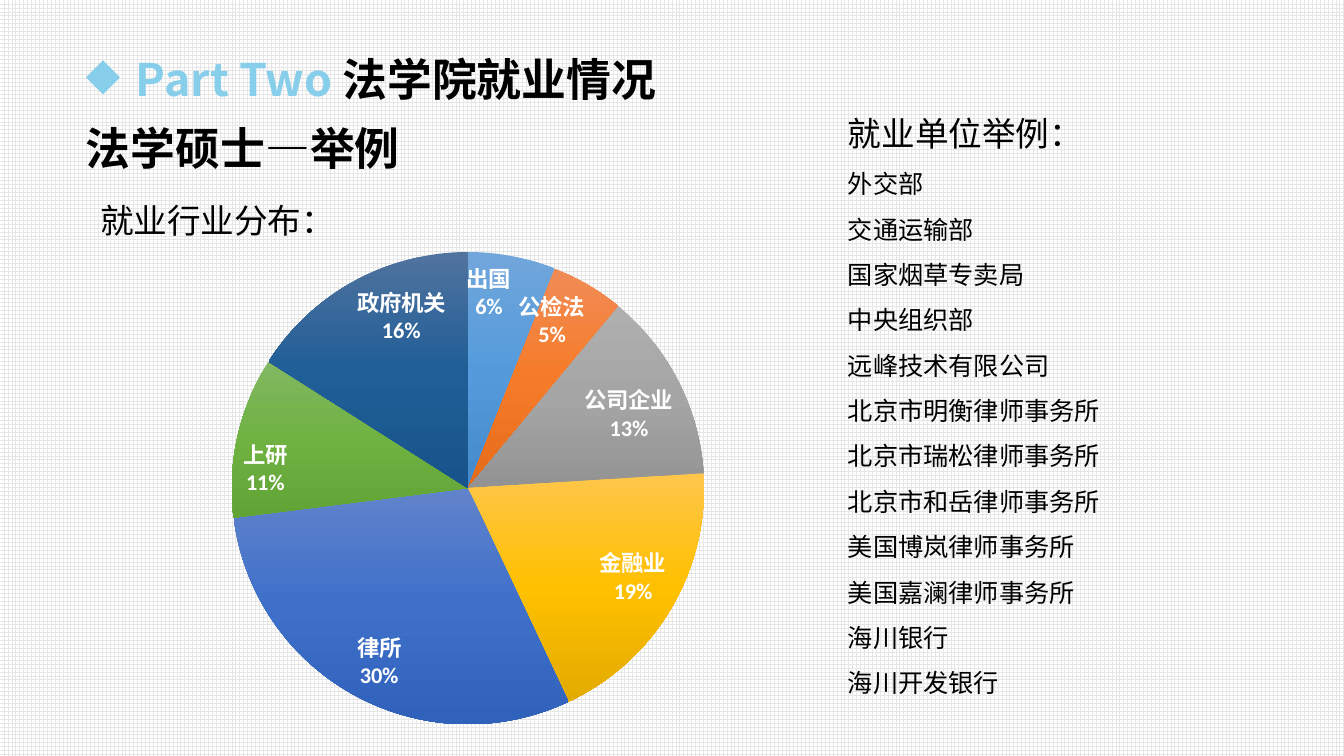
from copy import deepcopy

from lxml.etree import SubElement
from pptx import Presentation
from pptx.chart.data import CategoryChartData
from pptx.dml.color import RGBColor
from pptx.enum.chart import XL_CHART_TYPE, XL_LABEL_POSITION
from pptx.enum.dml import MSO_PATTERN
from pptx.enum.text import MSO_ANCHOR, MSO_AUTO_SIZE, PP_ALIGN
from pptx.oxml import parse_xml
from pptx.oxml.ns import nsdecls, qn
from pptx.util import Emu, Pt

SLIDE_WIDTH, SLIDE_HEIGHT = 1344, 756
SCALE = 12192000 / SLIDE_WIDTH
FONT = "Noto Sans CJK SC"
BLACK, WHITE, SKY = "000000", "FFFFFF", "87CEEB"

INDUSTRIES = [
    ("出国", 6, ("71A6DB", "559BDB", "448ACA")),
    ("公检法", 5, ("F18C57", "F67B28", "E56C19")),
    ("公司企业", 13, ("AFAFAF", "A5A5A5", "939393")),
    ("金融业", 19, ("FFC64B", "FFC000", "E3AB00")),
    ("律所", 30, ("6183CB", "3E70CA", "3062BB")),
    ("上研", 11, ("81B861", "6FB242", "62A336")),
    ("政府机关", 16, ("51739F", "205E97", "17548B")),
]
EMPLOYERS = [
    "外交部", "交通运输部", "国家烟草专卖局", "中央组织部",
    "远峰技术有限公司", "北京市明衡律师事务所", "北京市瑞松律师事务所",
    "北京市和岳律师事务所", "美国博岚律师事务所", "美国嘉澜律师事务所",
    "海川银行", "海川开发银行",
]


def px(length):
    return Emu(round(length * SCALE))


def color(hex_value):
    return RGBColor.from_string(hex_value)


def set_all(target, values):
    for name, value in values.items():
        setattr(target, name, value)


def place(holder, box):
    set_all(holder, dict(zip(("left", "top", "width", "height"), map(px, box))))


def prepare_frame(frame, wrap=True):
    set_all(frame, {
        "word_wrap": wrap, "auto_size": MSO_AUTO_SIZE.NONE,
        "vertical_anchor": MSO_ANCHOR.TOP,
        "margin_left": px(10), "margin_right": px(10),
        "margin_top": px(5), "margin_bottom": px(5),
    })


def write_line(paragraph, pieces, size, spacing, bold=False, bullet=None):
    set_all(paragraph, {
        "alignment": PP_ALIGN.LEFT, "line_spacing": Pt(spacing),
        "space_before": Pt(0), "space_after": Pt(0),
    })
    properties = paragraph._p.get_or_add_pPr()
    indent = px(50) if bullet else 0
    properties.set("marL", str(indent))
    properties.set("indent", str(-indent))
    if bullet:
        SubElement(properties, qn("a:buChar")).set("char", bullet)
    else:
        SubElement(properties, qn("a:buNone"))
    for text, hex_value in pieces:
        run = paragraph.add_run()
        run.text = text
        set_all(run.font, {"name": FONT, "size": Pt(size), "bold": bold})
        run.font.color.rgb = color(hex_value)
        east_asian = SubElement(run._r.get_or_add_rPr(), qn("a:ea"))
        east_asian.set("typeface", FONT)


def add_part_title(slide, box):
    title = slide.shapes.title
    place(title, box)
    prepare_frame(title.text_frame)
    write_line(title.text_frame.paragraphs[0],
               [("Part Two ", SKY), ("法学院就业情况", BLACK)],
               32, 41, bold=True, bullet="◆")


def add_heading(slide, box, text, size, spacing, bold=False):
    heading = slide.shapes.add_textbox(*map(px, box))
    prepare_frame(heading.text_frame)
    write_line(heading.text_frame.paragraphs[0], [(text, BLACK)],
               size, spacing, bold)


def add_employers(slide, box):
    employers = slide.placeholders[1]
    place(employers, box)
    frame = employers.text_frame
    prepare_frame(frame, wrap=False)
    write_line(frame.paragraphs[0], [("就业单位举例：", BLACK)], 24, 43.2)
    for employer in EMPLOYERS:
        write_line(frame.add_paragraph(), [(employer, BLACK)], 18, 32.4)


def shade_slice(point, shades):
    fill = point.format.fill
    fill.gradient()
    fill.gradient_angle = 270
    stop_list = point.format._element.find(".//" + qn("a:gsLst")) \
        if hasattr(point.format, "_element") else None
    if stop_list is None:
        stop_list = fill._fill._gradFill.gsLst
    stop_list.insert(1, deepcopy(stop_list[0]))
    for stop, position, shade in zip(fill.gradient_stops, (0, 0.5, 1), shades):
        stop.position = position
        stop.color.rgb = color(shade)
    point.format.line.fill.background()


def label_slices(series):
    labels = series.data_labels
    set_all(labels, {
        "show_percentage": True, "show_category_name": True,
        "show_value": False, "position": XL_LABEL_POSITION.INSIDE_END,
        "number_format": "0%", "number_format_is_linked": False,
    })
    set_all(labels.font, {"name": "Calibri", "size": Pt(16), "bold": True})
    labels.font.color.rgb = color(WHITE)
    separator = parse_xml(f"<c:separator {nsdecls('c')}>\n</c:separator>")
    labels._element.find(qn("c:showBubbleSize")).addnext(separator)


def fix_plot_area(chart):
    plot_area = chart._chartSpace.find(".//" + qn("c:plotArea"))
    for layout in plot_area.findall(qn("c:layout")):
        plot_area.remove(layout)
    layout = SubElement(plot_area, qn("c:layout"))
    plot_area.insert(0, layout)
    manual = SubElement(layout, qn("c:manualLayout"))
    for tag, value in (("layoutTarget", "inner"), ("xMode", "edge"),
                       ("yMode", "edge"), ("x", 0.1), ("y", 0),
                       ("w", 0.79), ("h", 0.98)):
        SubElement(manual, qn("c:" + tag)).set("val", str(value))


def add_industry_pie(slide, box):
    names, shares, shades = zip(*INDUSTRIES)
    data = CategoryChartData()
    data.categories = names
    data.add_series("就业行业分布", shares)
    chart = slide.shapes.add_chart(XL_CHART_TYPE.PIE, *map(px, box), data).chart
    set_all(chart, {"has_title": False, "has_legend": False})
    set_all(chart.font, {"name": "Calibri", "size": Pt(10)})
    chart.font.color.rgb = color(BLACK)
    chart.plots[0].vary_by_categories = True
    series = chart.plots[0].series[0]
    for index, slice_shades in enumerate(shades):
        shade_slice(series.points[index], slice_shades)
    label_slices(series)
    fix_plot_area(chart)


def build_employment_slide(deck):
    slide = deck.slides.add_slide(deck.slide_layouts[1])
    background = slide.background.fill
    background.patterned()
    background.pattern = MSO_PATTERN.LARGE_GRID
    background.fore_color.rgb = color("E7E6E6")
    background.back_color.rgb = color(WHITE)
    add_heading(slide, (76, 112, 491, 65), "法学硕士—举例", 32, 41, bold=True)
    add_heading(slide, (90, 171, 258, 65), "就业行业分布：", 24, 46)
    add_employers(slide, (838, 88, 287, 621))
    add_industry_pie(slide, (166, 252, 610, 482))
    add_part_title(slide, (76, 43, 939, 65))


def main():
    deck = Presentation()
    deck.slide_width, deck.slide_height = px(SLIDE_WIDTH), px(SLIDE_HEIGHT)
    build_employment_slide(deck)
    deck.save("out.pptx")


if __name__ == "__main__":
    main()
